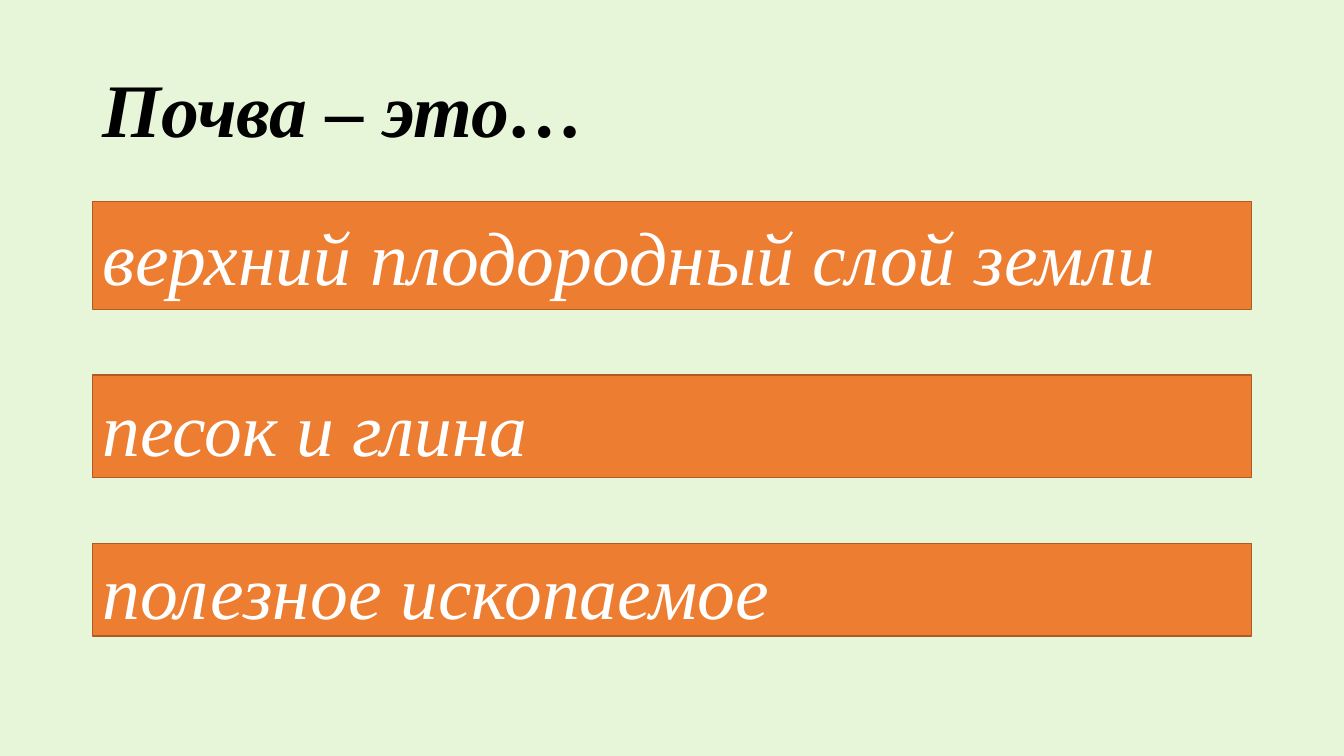
import pptx
import pptx.dml.color
import pptx.enum.shapes
import pptx.enum.text
import pptx.util

Pt = pptx.util.Pt
FONT = "Times New Roman"
LEFT, WIDTH = 66, 828
ANSWER_TOP, ANSWER_GAP = 144, 46.8
ANSWERS = [
    ("верхний плодородный слой земли", 77),
    ("песок и глина", 73.4),
    ("полезное ископаемое", 66.2),
]


def paint(target, color):
    """Give a colour format the colour of a hex string."""
    target.rgb = pptx.dml.color.RGBColor.from_string(color)


def write(shape, text, color, bold):
    """Put one left-aligned italic line in the middle of a shape."""
    frame = shape.text_frame
    frame.text = text
    frame.word_wrap = True
    frame.auto_size = pptx.enum.text.MSO_AUTO_SIZE.NONE
    frame.vertical_anchor = pptx.enum.text.MSO_ANCHOR.MIDDLE
    para = frame.paragraphs[0]
    para.alignment = pptx.enum.text.PP_ALIGN.LEFT
    font = para.runs[0].font
    font.name, font.size = FONT, Pt(54)
    font.bold, font.italic = bold, True
    paint(font.color, color)


def add_question(page, left, top, width, height):
    """Place the question in the title placeholder."""
    title = page.shapes.title
    title.left, title.top = Pt(left), Pt(top)
    title.width, title.height = Pt(width), Pt(height)
    write(title, "Почва – это…", "000000", True)
    title.text_frame.paragraphs[0].line_spacing = 0.9


def add_answer(page, text, left, top, width, height):
    """Draw one answer button in the given box."""
    button = page.shapes.add_shape(
        pptx.enum.shapes.MSO_SHAPE.ACTION_BUTTON_CUSTOM,
        Pt(left), Pt(top), Pt(width), Pt(height))
    button.shadow.inherit = False
    button.fill.solid()
    paint(button.fill.fore_color, "ED7D31")
    paint(button.line.color, "AF5C24")
    button.line.width = Pt(1)
    write(button, text, "FFFFFF", False)


def add_answers(page, left, top, width):
    """Stack the answer buttons with equal gaps."""
    for text, height in ANSWERS:
        add_answer(page, text, left, top, width, height)
        top += height + ANSWER_GAP


def main():
    """Build the quiz slide and save it."""
    deck = pptx.Presentation()
    deck.slide_width, deck.slide_height = Pt(960), Pt(540)
    page = deck.slides.add_slide(deck.slide_layouts.get_by_name("Title Only"))
    page.background.fill.solid()
    paint(page.background.fill.fore_color, "E7F5D9")
    add_question(page, LEFT, 28.75, WIDTH, 104.4)
    add_answers(page, LEFT, ANSWER_TOP, WIDTH)
    deck.save("out.pptx")


if __name__ == "__main__":
    main()
